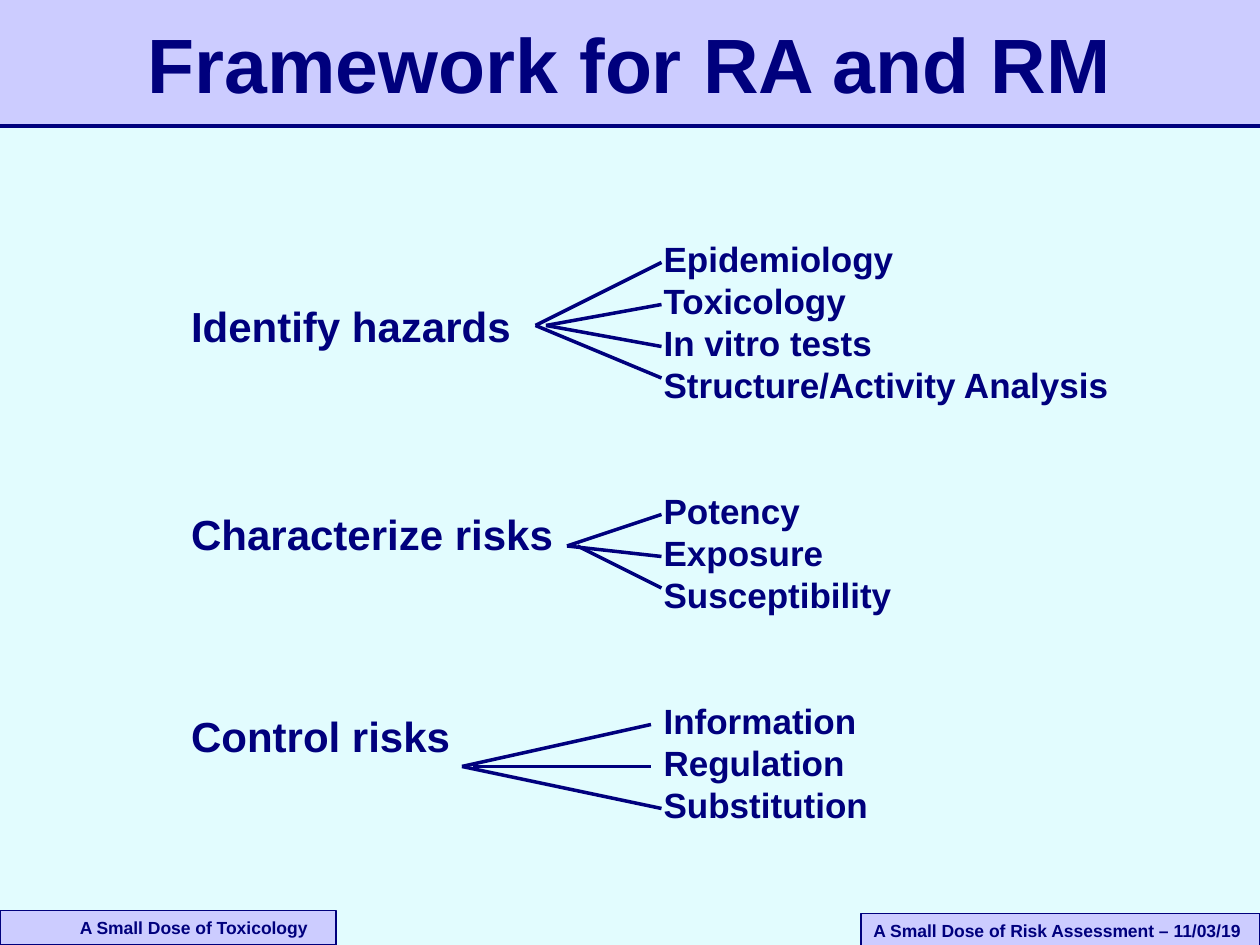
"""Build the slide on the framework for risk assessment and management."""
import dataclasses

import pptx
import pptx.dml.color
import pptx.enum.shapes
import pptx.enum.text
import pptx.util
from lxml import etree

PX = 7620
A = "{http://schemas.openxmlformats.org/drawingml/2006/main}"
TOP = pptx.enum.text.MSO_ANCHOR.TOP
MIDDLE = pptx.enum.text.MSO_ANCHOR.MIDDLE
LEFT = pptx.enum.text.PP_ALIGN.LEFT
CENTER = pptx.enum.text.PP_ALIGN.CENTER


@dataclasses.dataclass(frozen=True)
class Theme:
    ink: str = "00007D"
    band: str = "CCCCFF"
    page: str = "E2FCFE"
    font: str = "Arial"
    title: int = 44
    label: int = 24
    item: int = 20
    footer: int = 10
    rule: float = 2
    border: float = 0.75


def color(value):
    return pptx.dml.color.RGBColor.from_string(value)


def assign(target, values):
    for name, value in values.items():
        setattr(target, name, value)


class Board:
    def __init__(self, s, theme):
        self.s, self.theme = s, theme
        s.background.fill.solid()
        s.background.fill.fore_color.rgb = color(theme.page)

    def place(self, sp, box):
        names = ("left", "top", "width", "height")
        assign(sp, {name: value * PX for name, value in zip(names, box)})

    def add_text(self, p, text, size, align=LEFT, before=0):
        assign(p, {"alignment": align, "space_after": pptx.util.Pt(0),
                   "space_before": pptx.util.Pt(before),
                   "line_spacing": pptx.util.Pt(size * 1.2)})
        r = p.add_run()
        r.text = text
        assign(r.font, {"name": self.theme.font, "size": pptx.util.Pt(size), "bold": True})
        r.font.color.rgb = color(self.theme.ink)

    def frame(self, tf, anchor, inset=12):
        assign(tf, {"word_wrap": True, "vertical_anchor": anchor,
                    "auto_size": pptx.enum.text.MSO_AUTO_SIZE.NONE,
                    "margin_left": inset * PX, "margin_right": 12 * PX,
                    "margin_top": 6 * PX, "margin_bottom": 6 * PX})

    def placeholder(self, idx, box):
        sp = self.s.placeholders[idx]
        sp.element.getparent().append(sp.element)
        self.place(sp, box)
        return sp.text_frame

    def title(self, text, box):
        tf = self.placeholder(0, box)
        self.frame(tf, MIDDLE)
        self.add_text(tf.paragraphs[0], text, self.theme.title, CENTER)

    def body(self, idx, box, lines, size):
        tf = self.placeholder(idx, box)
        self.frame(tf, TOP)
        for i, (text, before) in enumerate(lines):
            p = tf.add_paragraph() if i else tf.paragraphs[0]
            pPr = etree.SubElement(p._p, A + "pPr", marL="0", indent="0")
            etree.SubElement(pPr, A + "buNone")
            self.add_text(p, text, size, before=before)

    def rect(self, box, border=True):
        sp = self.s.shapes.add_shape(pptx.enum.shapes.MSO_SHAPE.RECTANGLE,
                                     *(value * PX for value in box))
        sp.shadow.inherit = False
        sp.fill.solid()
        sp.fill.fore_color.rgb = color(self.theme.band)
        if border:
            sp.line.color.rgb = color(self.theme.ink)
            sp.line.width = pptx.util.Pt(self.theme.border)
        else:
            sp.line.fill.background()
        return sp

    def footer(self, text, box, inset):
        tf = self.rect(box).text_frame
        self.frame(tf, TOP, inset)
        self.add_text(tf.paragraphs[0], text, self.theme.footer)

    def line(self, start, end):
        points = (value * PX for value in (*start, *end))
        c = self.s.shapes.add_connector(pptx.enum.shapes.MSO_CONNECTOR.STRAIGHT, *points)
        c.line.color.rgb = color(self.theme.ink)
        c.line.width = pptx.util.Pt(self.theme.rule)
        etree.SubElement(c.element.spPr, A + "effectLst")


LABELS = [("Identify hazards", 0), ("Characterize risks", 90), ("Control risks", 86.5)]
GROUPS = [
    ["Epidemiology", "Toxicology", "In vitro tests", "Structure/Activity Analysis"],
    ["Potency", "Exposure", "Susceptibility"],
    ["Information", "Regulation", "Substitution"],
]
FANS = {
    310: [(510, 630, 250), (520, 630, 330), (520, 630, 290), (510, 630, 360)],
    520: [(540, 630, 490), (540, 630, 530), (550, 630, 560)],
    730: [(440, 620, 690), (450, 620, 730), (440, 630, 770)],
}


def main():
    prs = pptx.Presentation()
    assign(prs, {"slide_width": 1200 * PX, "slide_height": 900 * PX})
    theme = Theme()
    board = Board(prs.slides.add_slide(prs.slide_layouts[3]), theme)

    board.rect((0, 0, 1200, 120), border=False)
    board.line((0, 120), (1200, 120))
    board.footer("A Small Dose of Risk Assessment – 11/03/19", (820, 870, 380, 32), 12)
    board.footer("A Small Dose of Toxicology", (0, 867, 320, 33), 76)

    board.title("Framework for RA and RM", (90, 10, 1020, 100))
    board.body(1, (170, 280, 420, 474), LABELS, theme.label)
    gap = 2 * 1.2 * theme.item
    items = [(text, gap if g and not i else 0)
             for g, group in enumerate(GROUPS) for i, text in enumerate(group)]
    board.body(2, (620, 220, 460, 572), items, theme.item)

    for y, rays in FANS.items():
        for x, end_x, end_y in rays:
            board.line((x, y), (end_x, end_y))
    prs.save("out.pptx")


if __name__ == "__main__":
    main()
